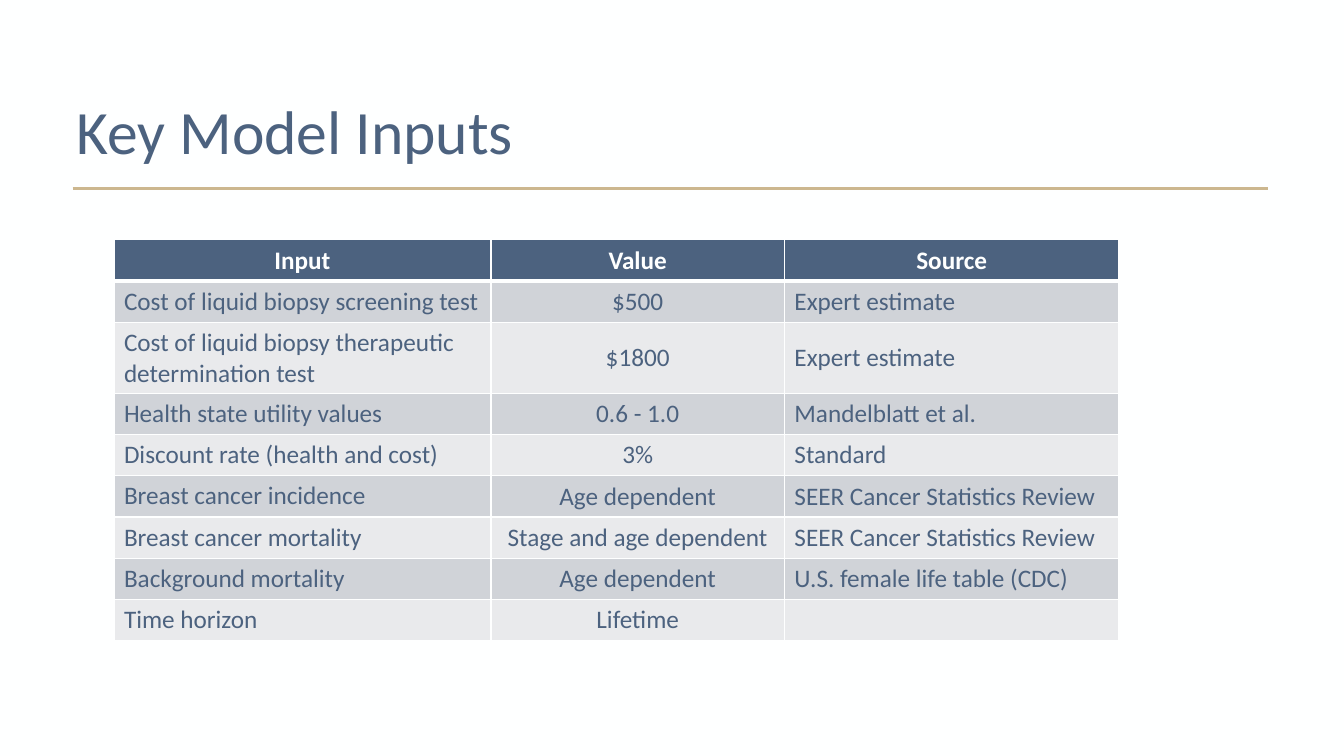
"""Build the Key Model Inputs slide with its table of model parameters."""
import pptx
import pptx.dml.color
import pptx.enum.shapes
import pptx.enum.text
import pptx.oxml
import pptx.oxml.ns
import pptx.util

Inches, Pt = pptx.util.Inches, pptx.util.Pt
RGBColor = pptx.dml.color.RGBColor
ALIGN = pptx.enum.text.PP_ALIGN
ANCHOR = pptx.enum.text.MSO_ANCHOR

SLATE = RGBColor(0x4C, 0x62, 0x7F)
OFF_WHITE = RGBColor(0xFE, 0xFF, 0xFF)
GOLD = RGBColor(0xCC, 0xB7, 0x8F)
BAND_DARK = RGBColor(0xD0, 0xD3, 0xD8)
BAND_LIGHT = RGBColor(0xE9, 0xEA, 0xEC)

HEADINGS = ("Input", "Value", "Source")
MODEL_INPUTS = (
    ("Cost of liquid biopsy screening test", "$500", "Expert estimate"),
    ("Cost of liquid biopsy therapeutic determination test", "$1800", "Expert estimate"),
    ("Health state utility values", "0.6 - 1.0", "Mandelblatt et al."),
    ("Discount rate (health and cost)", "3%", "Standard"),
    ("Breast cancer incidence", "Age dependent", "SEER Cancer Statistics Review"),
    ("Breast cancer mortality", "Stage and age dependent", "SEER Cancer Statistics Review"),
    ("Background mortality", "Age dependent", "U.S. female life table (CDC)"),
    ("Time horizon", "Lifetime", ""),
)
COLUMN_WIDTHS = (3.74, 2.91, 3.32)
COLUMN_ALIGNS = (ALIGN.LEFT, ALIGN.CENTER, ALIGN.LEFT)
ROW_HEIGHT = 0.41


class SlideBuilder:
    """Hold the slide and its type style, and add each kind of element."""

    font = "Calibri"

    def __init__(self, slide):
        """Take the slide and paint its background."""
        self.slide = slide
        slide.background.fill.solid()
        slide.background.fill.fore_color.rgb = OFF_WHITE

    def add_text(self, paragraph, wording, size, color, bold=False):
        """Add one styled run to a paragraph."""
        run = paragraph.add_run()
        run.text = wording
        run.font.name = self.font
        run.font.size = Pt(size)
        run.font.bold = bold
        run.font.color.rgb = color

    def title(self, wording, left, top, width, height):
        """Add the bottom-anchored slide title."""
        heading = self.slide.shapes.add_textbox(
            Inches(left), Inches(top), Inches(width), Inches(height)).text_frame
        heading.word_wrap = True
        heading.vertical_anchor = ANCHOR.BOTTOM
        heading.paragraphs[0].line_spacing = 0.9
        self.add_text(heading.paragraphs[0], wording, 44, SLATE)

    def rule(self, left, right, height):
        """Add a horizontal rule without a shadow."""
        divider = self.slide.shapes.add_connector(
            pptx.enum.shapes.MSO_CONNECTOR.STRAIGHT,
            Inches(left), Inches(height), Inches(right), Inches(height))
        divider.line.color.rgb = GOLD
        divider.line.width = Pt(1.5)
        divider._element.spPr.append(pptx.oxml.parse_xml(
            f"<a:effectLst {pptx.oxml.ns.nsdecls('a')}/>"))

    def borders(self, cell, top, bottom):
        """Draw the four borders of a cell, with top and bottom widths in points."""
        properties = cell._tc.get_or_add_tcPr()
        for side, points in (("L", 1), ("R", 1), ("T", top), ("B", bottom)):
            properties.append(pptx.oxml.parse_xml(
                f'<a:ln{side} {pptx.oxml.ns.nsdecls("a")} w="{Pt(points)}">'
                f'<a:solidFill><a:srgbClr val="{OFF_WHITE}"/></a:solidFill></a:ln{side}>'))

    def cell(self, cell, wording, align, anchor, fill, color, bold):
        """Fill one table cell and set its wording."""
        cell.fill.solid()
        cell.fill.fore_color.rgb = fill
        cell.vertical_anchor = anchor
        paragraph = cell.text_frame.paragraphs[0]
        paragraph.alignment = align
        if wording:
            self.add_text(paragraph, wording, 18, color, bold)

    def table(self, left, top, headings, records):
        """Add a table with a dark header and alternating bands."""
        rows = (headings, *records)
        grid = self.slide.shapes.add_table(
            len(rows), len(headings), Inches(left), Inches(top),
            Inches(sum(COLUMN_WIDTHS)), Inches(ROW_HEIGHT * len(rows))).table
        for column, width in zip(grid.columns, COLUMN_WIDTHS):
            column.width = Inches(width)
        for r, record in enumerate(rows):
            grid.rows[r].height = Inches(ROW_HEIGHT)
            header = r == 0
            band = BAND_DARK if r % 2 else BAND_LIGHT
            for c, wording in enumerate(record):
                cell = grid.cell(r, c)
                self.borders(cell, 3 if r == 1 else 1, 3 if header else 1)
                self.cell(
                    cell, wording,
                    ALIGN.CENTER if header else COLUMN_ALIGNS[c],
                    ANCHOR.MIDDLE if header or c else ANCHOR.TOP,
                    SLATE if header else band,
                    OFF_WHITE if header else SLATE,
                    header)


def main():
    """Build and save the slide."""
    deck = pptx.Presentation()
    deck.slide_width, deck.slide_height = Inches(13.33), Inches(7.5)
    builder = SlideBuilder(deck.slides.add_slide(deck.slide_layouts[6]))
    builder.title("Key Model Inputs", 0.66, 0.09, 11.41, 1.62)
    builder.rule(0.72, 12.58, 1.87)
    builder.table(1.13, 2.38, HEADINGS, MODEL_INPUTS)
    deck.save("out.pptx")


if __name__ == "__main__":
    main()
